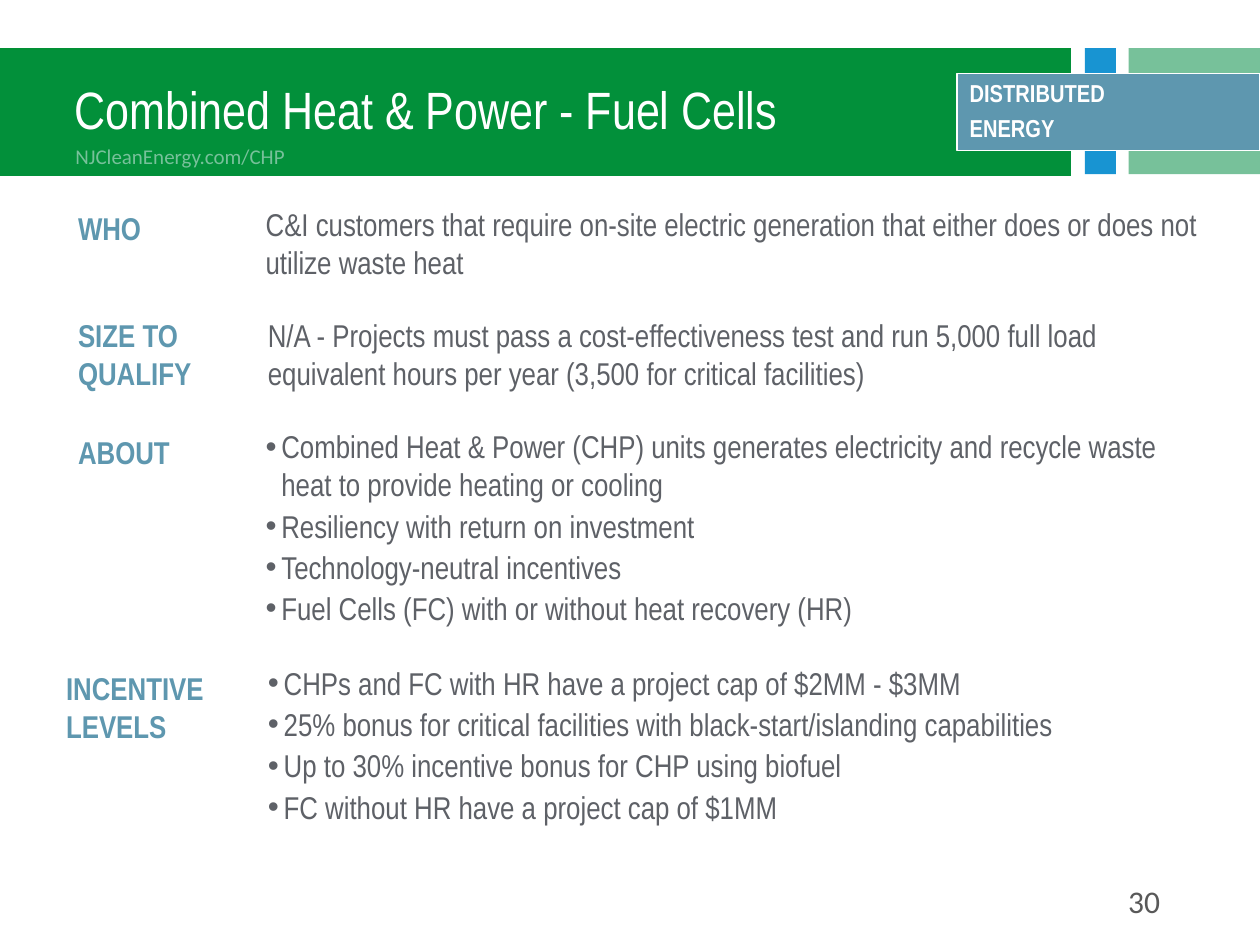
from lxml import etree
from pptx import Presentation
from pptx.dml.color import RGBColor
from pptx.enum.shapes import MSO_SHAPE
from pptx.enum.text import MSO_ANCHOR, MSO_AUTO_SIZE, PP_ALIGN
from pptx.oxml.ns import qn
from pptx.util import Pt

RECTANGLE = MSO_SHAPE.RECTANGLE
MIDDLE = MSO_ANCHOR.MIDDLE
FIT_SHAPE = MSO_AUTO_SIZE.SHAPE_TO_FIT_TEXT
LEFT, RIGHT = PP_ALIGN.LEFT, PP_ALIGN.RIGHT

COLORS = {
    "blue": "1894D2", "mint": "77C19A", "band": "029035", "title": "02903A",
    "steel": "5E97AF", "body": "5E6167", "number": "595959", "white": "FFFFFF",
}
NARROW, CALIBRI = "Arial Narrow", "Calibri"
STYLES = {
    "title": ({"name": NARROW, "size": Pt(30)}, "white"),
    "tag": ({"name": NARROW, "size": Pt(14), "bold": True}, "white"),
    "address": ({"name": CALIBRI, "size": Pt(12)}, "mint"),
    "label": ({"name": NARROW, "size": Pt(18), "bold": True}, "steel"),
    "body": ({"name": NARROW, "size": Pt(18)}, "body"),
    "number": ({"name": CALIBRI, "size": Pt(18)}, "number"),
}
LABEL_LEFT, LABEL_WIDTH = 37.5, 108.7

# Label lines, label box (left, top, width, height), body lines, body box, bulleted
SECTIONS = [
    (["WHO"], (LABEL_LEFT, 116, LABEL_WIDTH, 29.2),
     ["C&I customers that require on-site electric generation that either "
      "does or does not utilize waste heat"],
     (144.7, 113.7, 567.4, 51), False),
    (["SIZE TO QUALIFY"], (LABEL_LEFT, 177.1, LABEL_WIDTH, 51),
     ["N/A - Projects must pass a cost-effectiveness test and run 5,000 full "
      "load equivalent hours per year (3,500 for critical facilities)"],
     (146, 177.1, 543, 51), False),
    (["ABOUT"], (LABEL_LEFT, 244, LABEL_WIDTH, 29.2),
     ["Combined Heat & Power (CHP) units generates electricity and recycle "
      "waste heat to provide heating or cooling",
      "Resiliency with return on investment",
      "Technology-neutral incentives",
      "Fuel Cells (FC) with or without heat recovery (HR)"],
     (144.7, 240.7, 551, 122.6), True),
    (["INCENTIVE", "LEVELS"], (30.7, 379, 122.4, 51),
     ["CHPs and FC with HR have a project cap of $2MM - $3MM",
      "25% bonus for critical facilities with black-start/islanding capabilities",
      "Up to 30% incentive bonus for CHP using biofuel",
      "FC without HR have a project cap of $1MM"],
     (146, 375.8, 567.4, 124.6), True),
]


def rgb(name):
    return RGBColor.from_string(COLORS[name])


def set_indent(paragraph, margin, indent, bullet=False):
    properties = paragraph._p.get_or_add_pPr()
    properties.set("marL", str(Pt(margin)))
    properties.set("indent", str(Pt(indent)))
    if bullet:
        font = etree.SubElement(properties, qn("a:buFont"))
        font.set("typeface", "Arial")
        etree.SubElement(properties, qn("a:buChar")).set("char", "•")


def write_lines(frame, lines, style, bulleted=False, margin=0, **spacing):
    """Fill a text frame, one paragraph per line, with a named style."""
    frame.word_wrap = True
    values, color = STYLES[style]
    for index, line in enumerate(lines):
        paragraph = frame.add_paragraph() if index else frame.paragraphs[0]
        if bulleted:
            set_indent(paragraph, 9, -9, bullet=True)
        else:
            set_indent(paragraph, margin, 0)
        for name, value in {"alignment": LEFT, **spacing}.items():
            setattr(paragraph, name, value)
        run = paragraph.add_run()
        run.text = line
        for name, value in values.items():
            setattr(run.font, name, value)
        run.font.color.rgb = rgb(color)


def add_block(slide, box, color, line=None):
    shape = slide.shapes.add_shape(RECTANGLE, *map(Pt, box))
    shape.shadow.inherit = False
    shape.fill.solid()
    shape.fill.fore_color.rgb = rgb(color)
    if line:
        shape.line.color.rgb = rgb(line)
        shape.line.width = Pt(1)
    else:
        shape.line.fill.background()
    shape.text_frame.vertical_anchor = MIDDLE
    return shape


def add_text(slide, box, lines, style, fit=True, **options):
    frame = slide.shapes.add_textbox(*map(Pt, box)).text_frame
    write_lines(frame, lines, style, **options)
    if fit:
        frame.auto_size = FIT_SHAPE


def add_header(slide, left, top, width, height):
    add_block(slide, (left + 620, top, 17.7, height), "blue")
    add_block(slide, (left + 645, top, width - 645, height), "mint")
    band_width = 612.5
    add_block(slide, (left - 0.5, top, band_width, height), "band")
    title = add_block(slide, (left - 0.5, top + 1, band_width, height), "title")
    write_lines(title.text_frame, ["Combined Heat & Power - Fuel Cells"],
                "title", margin=36, line_spacing=0.9)

    tag = add_block(slide, (left + width - 173, top + 14.5, 173, 44),
                    "steel", line="white")
    tag.text_frame.margin_top = tag.text_frame.margin_bottom = Pt(4)
    write_lines(tag.text_frame, ["DISTRIBUTED", "ENERGY"], "tag",
                line_spacing=0.9, space_after=Pt(5))
    add_text(slide, (left + 36, top + 51, 291, 21.8),
             ["NJCleanEnergy.com/CHP"], "address")


def add_section(slide, label, label_box, body, body_box, bulleted):
    add_text(slide, label_box, label, "label")
    add_text(slide, body_box, body, "body", bulleted=bulleted,
             level=1, space_after=Pt(2))


def main():
    presentation = Presentation()
    presentation.slide_width, presentation.slide_height = Pt(720), Pt(540)
    slide = presentation.slides.add_slide(presentation.slide_layouts[6])
    add_header(slide, 0, 27.5, 720, 72)
    for section in SECTIONS:
        add_section(slide, *section)
    add_text(slide, (508, 500.5, 162, 28.8), ["30"], "number",
             fit=False, alignment=RIGHT)
    presentation.save("out.pptx")


if __name__ == "__main__":
    main()
